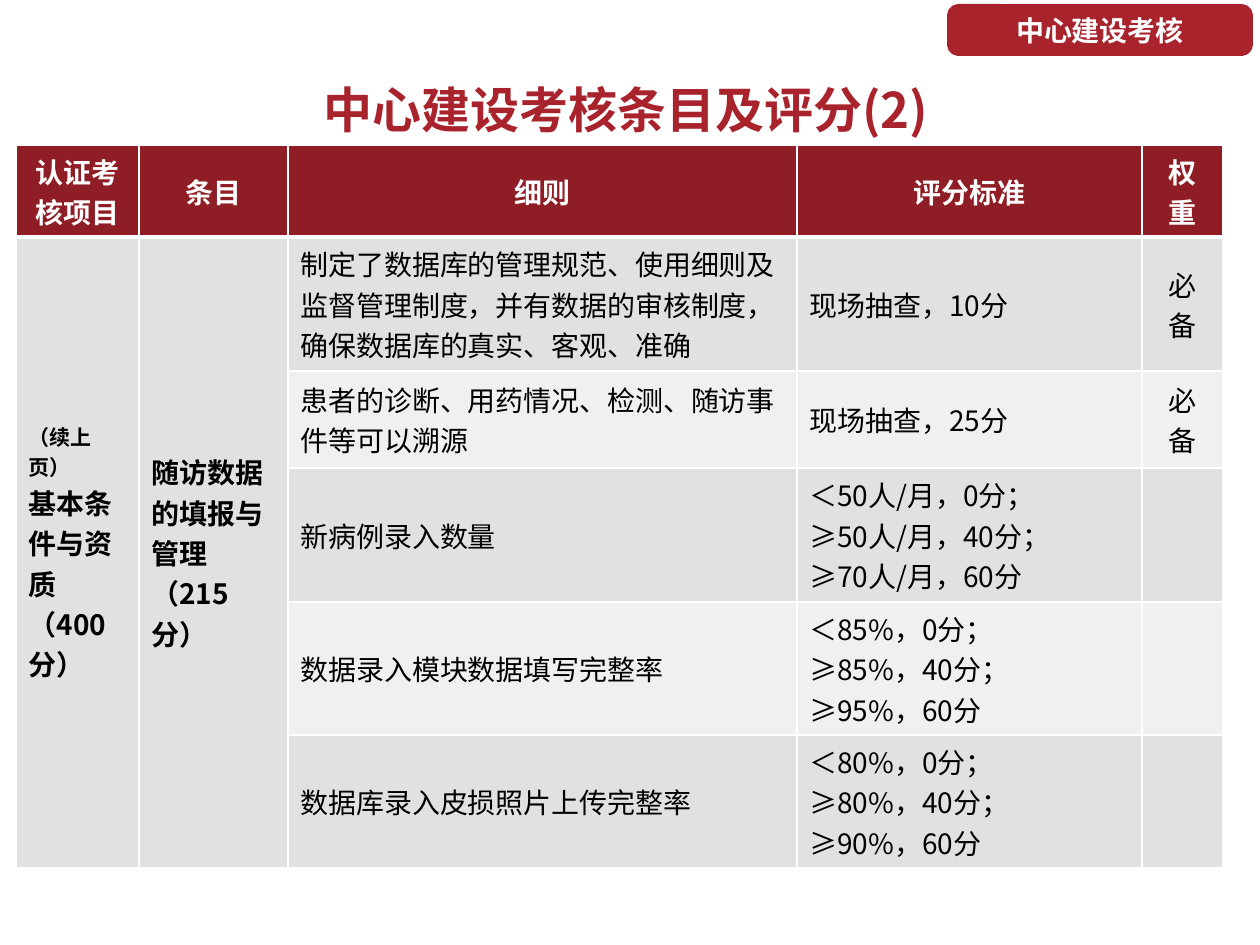
from lxml import etree
from pptx import Presentation
from pptx import util as u
from pptx.dml.color import RGBColor
from pptx.enum import shapes, text
from pptx.oxml.ns import qn

PX = 914400 // 126
FONT = "Noto Sans CJK SC"
RED, DARK_RED, WHITE, BLACK = "A9232D", "8F1D25", "FFFFFF", "000000"
BANDS = ["E1E1E1", "F0F0F0"]

TABLE_LEFT, TABLE_TOP = 16, 145
COLUMN_WIDTHS = [123, 149, 509, 345, 81]
ROW_HEIGHTS = [92, 134, 97, 134, 133, 133]
HEADERS = ["认证考核项目", "条目", "细则", "评分标准", "权重"]
ITEMS = [
    ("制定了数据库的管理规范、使用细则及监督管理制度，并有数据的审核制度，确保数据库的真实、客观、准确",
     ["现场抽查，10分"], "必备"),
    ("患者的诊断、用药情况、检测、随访事件等可以溯源", ["现场抽查，25分"], "必备"),
    ("新病例录入数量", ["＜50人/月，0分；", "≥50人/月，40分；", "≥70人/月，60分"], ""),
    ("数据录入模块数据填写完整率", ["＜85%，0分；", "≥85%，40分；", "≥95%，60分"], ""),
    ("数据库录入皮损照片上传完整率", ["＜80%，0分；", "≥80%，40分；", "≥90%，60分"], ""),
]


def px(*lengths):
    return [length * PX for length in lengths]


def color(value):
    return RGBColor.from_string(value)


def write(paragraph, lines, size=16, ink=BLACK, bold=False, centered=False):
    """Fill a paragraph with lines parted by line breaks, in one font."""
    for index, line in enumerate(lines):
        if index:
            paragraph.add_line_break()
        paragraph.add_run().text = line
    paragraph.alignment = text.PP_ALIGN.CENTER if centered else text.PP_ALIGN.LEFT
    font = paragraph.font
    font.size, font.bold, font.name = u.Pt(size), bold, FONT
    font.color.rgb = color(ink)
    properties = paragraph._p.pPr.find(qn("a:defRPr"))
    etree.SubElement(properties, qn("a:ea"), typeface=FONT)


def add_title(slide):
    box = slide.shapes.add_textbox(*px(83, 67, 1086, 91))
    frame = box.text_frame
    frame.word_wrap = True
    frame.vertical_anchor = text.MSO_ANCHOR.MIDDLE
    paragraph = frame.paragraphs[0]
    paragraph.line_spacing = 0.9
    write(paragraph, ["中心建设考核条目及评分(2)"], 28, RED, True, True)


def add_section_tag(slide):
    tag = slide.shapes.add_shape(shapes.MSO_SHAPE.ROUNDED_RECTANGLE, *px(951, 8, 298, 44))
    tag.shadow.inherit = False
    tag.fill.solid()
    tag.fill.fore_color.rgb = color(RED)
    tag.line.color.rgb = color(RED)
    tag.line.width = u.Pt(4.5)
    tag.text_frame.vertical_anchor = text.MSO_ANCHOR.MIDDLE
    write(tag.text_frame.paragraphs[0], ["中心建设考核"], 16, WHITE, True, True)


def style_cell(cell, fill, top=1, bottom=1):
    """Set the anchor, white borders (widths in points) and fill of a cell."""
    cell.vertical_anchor = text.MSO_ANCHOR.MIDDLE
    properties = cell._tc.get_or_add_tcPr()
    for side, width in (("L", 1), ("R", 1), ("T", top), ("B", bottom)):
        border = etree.SubElement(properties, qn(f"a:ln{side}"), w=str(u.Pt(width)))
        solid = etree.SubElement(border, qn("a:solidFill"))
        etree.SubElement(solid, qn("a:srgbClr"), val=WHITE)
    cell.fill.solid()
    cell.fill.fore_color.rgb = color(fill)


def add_score_table(slide):
    frame = slide.shapes.add_table(
        len(ROW_HEIGHTS), len(COLUMN_WIDTHS),
        *px(TABLE_LEFT, TABLE_TOP, sum(COLUMN_WIDTHS), sum(ROW_HEIGHTS)))
    table = frame.table
    for column, width in zip(table.columns, px(*COLUMN_WIDTHS)):
        column.width = width
    for row, height in zip(table.rows, px(*ROW_HEIGHTS)):
        row.height = height

    for column, header in enumerate(HEADERS):
        cell = table.cell(0, column)
        style_cell(cell, DARK_RED, bottom=3)
        write(cell.text_frame.paragraphs[0], [header], 16, WHITE, True, True)

    for row, (rule, criteria, weight) in enumerate(ITEMS, 1):
        for column in range(len(HEADERS)):
            band = BANDS[0] if column < 2 else BANDS[(row - 1) % 2]
            style_cell(table.cell(row, column), band, top=3 if row == 1 else 1)
        for column, lines in ((2, [rule]), (3, criteria), (4, [weight] if weight else [])):
            paragraph = table.cell(row, column).text_frame.paragraphs[0]
            write(paragraph, lines, centered=column == 4)

    for column in range(2):
        table.cell(1, column).merge(table.cell(len(ITEMS), column))
    project = table.cell(1, 0).text_frame
    write(project.paragraphs[0], ["（续上页）"], 12, bold=True)
    write(project.add_paragraph(), ["基本条件与资质（400分）"], bold=True)
    write(table.cell(1, 1).text_frame.paragraphs[0], ["随访数据的填报与管理（215分）"], bold=True)


def main():
    presentation = Presentation()
    presentation.slide_width, presentation.slide_height = px(1260, 945)
    slide = presentation.slides.add_slide(presentation.slide_layouts[6])
    add_title(slide)
    add_section_tag(slide)
    add_score_table(slide)
    presentation.save("out.pptx")


if __name__ == "__main__":
    main()
